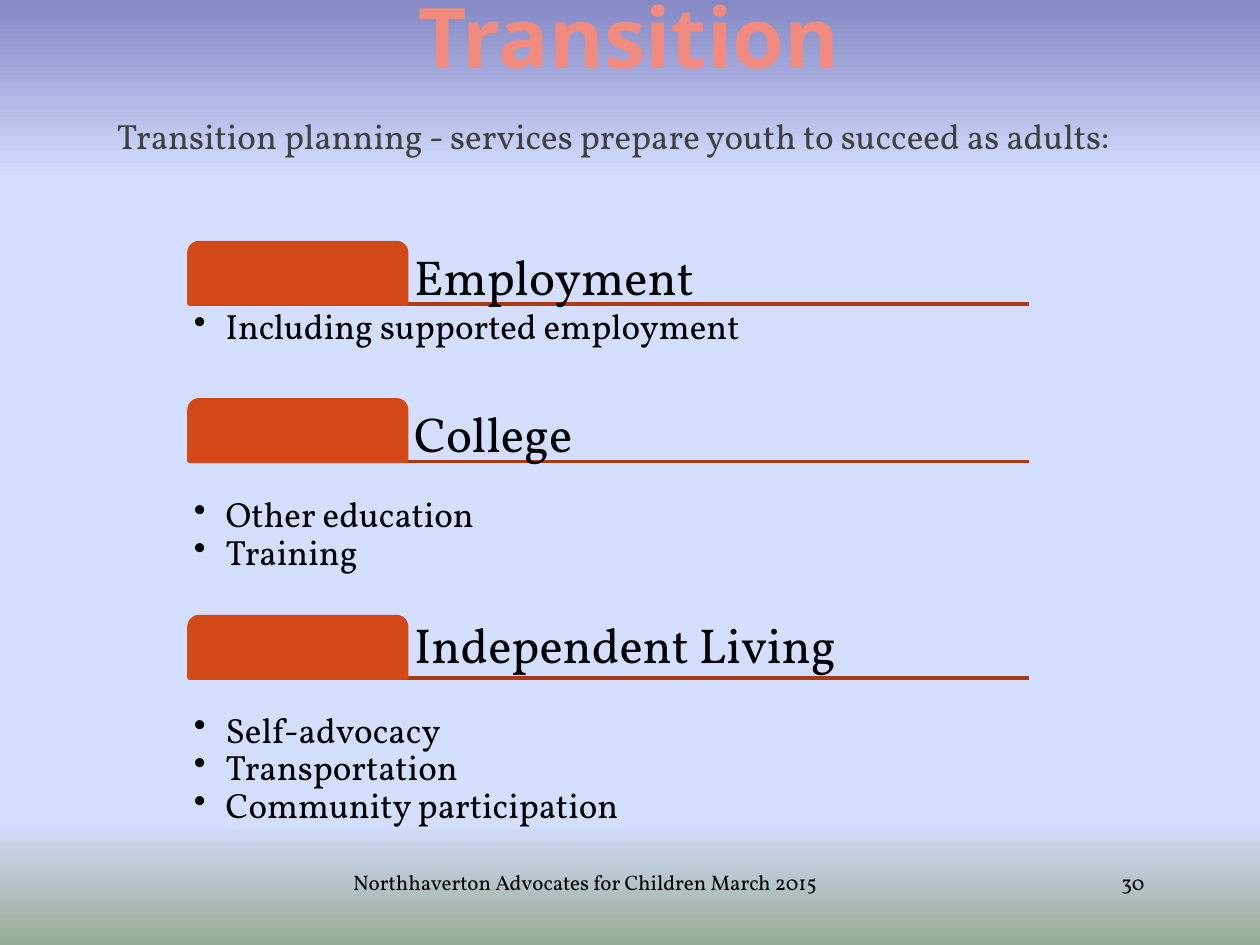
from dataclasses import dataclass

from lxml.etree import SubElement
from pptx import Presentation
from pptx.dml.color import RGBColor
from pptx.enum.shapes import MSO_CONNECTOR, MSO_SHAPE
from pptx.enum.text import MSO_ANCHOR, PP_ALIGN
from pptx.oxml import parse_xml
from pptx.oxml.ns import nsdecls, qn
from pptx.util import Cm, Pt


@dataclass(frozen=True)
class Theme:
    heading_font: str = "Noto Sans"
    body_font: str = "Vollkorn"
    title_size: float = 47.7
    section_size: float = 28
    body_size: float = 20
    footer_size: float = 12
    title: str = "F28B7F"
    subtitle: str = "404040"
    text: str = "000000"
    tab: str = "D34817"
    rule: str = "A93A12"
    background: tuple = ((0, "8488C4"), (19, "D4DEFF"), (87, "D4DEFF"), (100, "96AB94"))


THEME = Theme()
LEFT, TAB_WIDTH, TAB_HEIGHT, SECTION_WIDTH = 3.81, 4.39, 1.24, 16.94

# Heading, rule height, heading top, bullets top (cm), bullets
SECTIONS = [
    ("Employment", 6.13, 4.97, 6.13, ["Including supported employment"]),
    ("College", 9.3, 8.13, 9.93, ["Other education", "Training"]),
    ("Independent Living", 13.67, 12.39, 14.27,
     ["Self-advocacy", "Transportation", "Community participation"]),
]


def paint_background(page):
    stops = "".join(
        f'<a:gs pos="{position * 1000}"><a:srgbClr val="{color}"/></a:gs>'
        for position, color in THEME.background)
    gradient = parse_xml(
        f'<a:gradFill {nsdecls("a")} rotWithShape="1"><a:gsLst>{stops}</a:gsLst>'
        '<a:lin ang="5400000" scaled="0"/></a:gradFill>')
    page.background.fill.solid()
    solid = page.element.find(".//" + qn("p:bgPr") + "/" + qn("a:solidFill"))
    solid.getparent().replace(solid, gradient)


def format_paragraph(para, size, color, align=PP_ALIGN.LEFT, font=THEME.body_font):
    para.alignment = align
    para.font.name = font
    para.font.size = Pt(size)
    para.font.color.rgb = RGBColor.from_string(color)


def set_frame(box, insets, anchor):
    frame = box.text_frame
    frame.word_wrap = True
    frame.vertical_anchor = anchor
    frame.margin_left, frame.margin_top, frame.margin_right, frame.margin_bottom = map(Cm, insets)
    return frame


def add_title(page, text):
    title = page.shapes.title
    title.left, title.top, title.width, title.height = map(Cm, (2.24, -0.3, 20.12, 2.46))
    frame = set_frame(title, (0.76, 0, 0, 0.43), MSO_ANCHOR.MIDDLE)
    frame.text = text
    para = frame.paragraphs[0]
    format_paragraph(para, THEME.title_size, THEME.title, PP_ALIGN.CENTER, THEME.heading_font)
    para.font.bold = True


def add_text(page, place, lines, size, color=THEME.text, align=PP_ALIGN.LEFT,
             insets=(0, 0, 0, 0), anchor=MSO_ANCHOR.TOP):
    box = page.shapes.add_textbox(*map(Cm, place))
    frame = set_frame(box, insets, anchor)
    frame.text = "\n".join(lines)
    for para in frame.paragraphs:
        format_paragraph(para, size, color, align)
    return frame


def add_bullets(page, top, lines):
    frame = add_text(page, (LEFT, top, SECTION_WIDTH, 2.49), lines, THEME.body_size,
                     insets=(0.1, 0.1, 0.1, 0.1))
    for para in frame.paragraphs:
        para.line_spacing = 0.9
        properties = para._p.get_or_add_pPr()
        properties.set("marL", str(Cm(0.64)))
        properties.set("indent", str(-Cm(0.64)))
        bullet = SubElement(properties, qn("a:buChar"))
        bullet.set("char", "•")
        # The bullet belongs before the default run properties
        properties.find(qn("a:defRPr")).addprevious(bullet)


def add_rule(page, height):
    rule = page.shapes.add_connector(
        MSO_CONNECTOR.STRAIGHT, Cm(LEFT), Cm(height), Cm(LEFT + SECTION_WIDTH), Cm(height))
    rule.line.color.rgb = RGBColor.from_string(THEME.rule)
    rule.line.width = Pt(2)
    SubElement(rule._element.spPr, qn("a:effectLst"))


def add_tab(page, bottom):
    tab = page.shapes.add_shape(
        MSO_SHAPE.ROUND_2_SAME_RECTANGLE,
        Cm(LEFT), Cm(bottom - TAB_HEIGHT), Cm(TAB_WIDTH), Cm(TAB_HEIGHT))
    tab.shadow.inherit = False
    tab.adjustments[0] = 0.167
    tab.fill.solid()
    tab.fill.fore_color.rgb = tab.line.color.rgb = RGBColor.from_string(THEME.tab)
    tab.line.width = Pt(2)


def add_section(page, heading, rule_height, heading_top, bullets_top, bullets):
    add_rule(page, rule_height)
    add_tab(page, rule_height)
    heading_left = LEFT + TAB_WIDTH
    add_text(page, (heading_left, heading_top, SECTION_WIDTH - TAB_WIDTH, 1.37),
             [heading], THEME.section_size, insets=(0.15, 0, 0.15, 0))
    add_bullets(page, bullets_top, bullets)


def add_footer(page, left, width, text):
    add_text(page, (left, 17.15, width, 1.02), [text], THEME.footer_size,
             align=PP_ALIGN.RIGHT, insets=(0, 0.13, 0, 0.13), anchor=MSO_ANCHOR.BOTTOM)


def main():
    deck = Presentation()
    deck.slide_width, deck.slide_height = Cm(25.4), Cm(19.05)
    page = deck.slides.add_slide(deck.slide_layouts[5])
    paint_background(page)

    # Title and introduction
    add_title(page, "Transition")
    add_text(page, (0, 2.31, 24.74, 1.4),
             ["Transition planning - services prepare youth to succeed as adults:"],
             THEME.body_size, THEME.subtitle, PP_ALIGN.CENTER)

    # Goals of transition planning
    for section in SECTIONS:
        add_section(page, *section)

    # Footer and page number
    add_footer(page, 4.24, 12.24, "Northhaverton Advocates for Children March 2015")
    add_footer(page, 22.23, 0.84, "30")

    deck.save("out.pptx")


if __name__ == "__main__":
    main()
